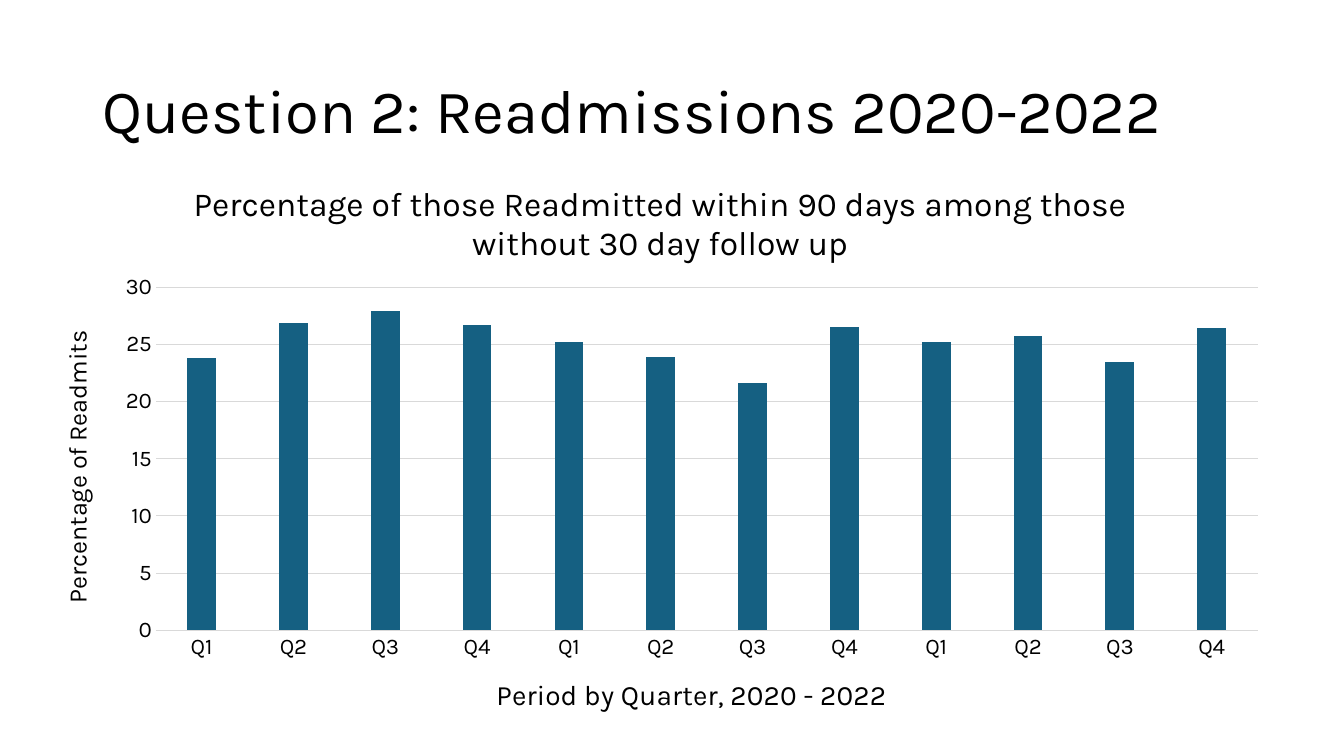
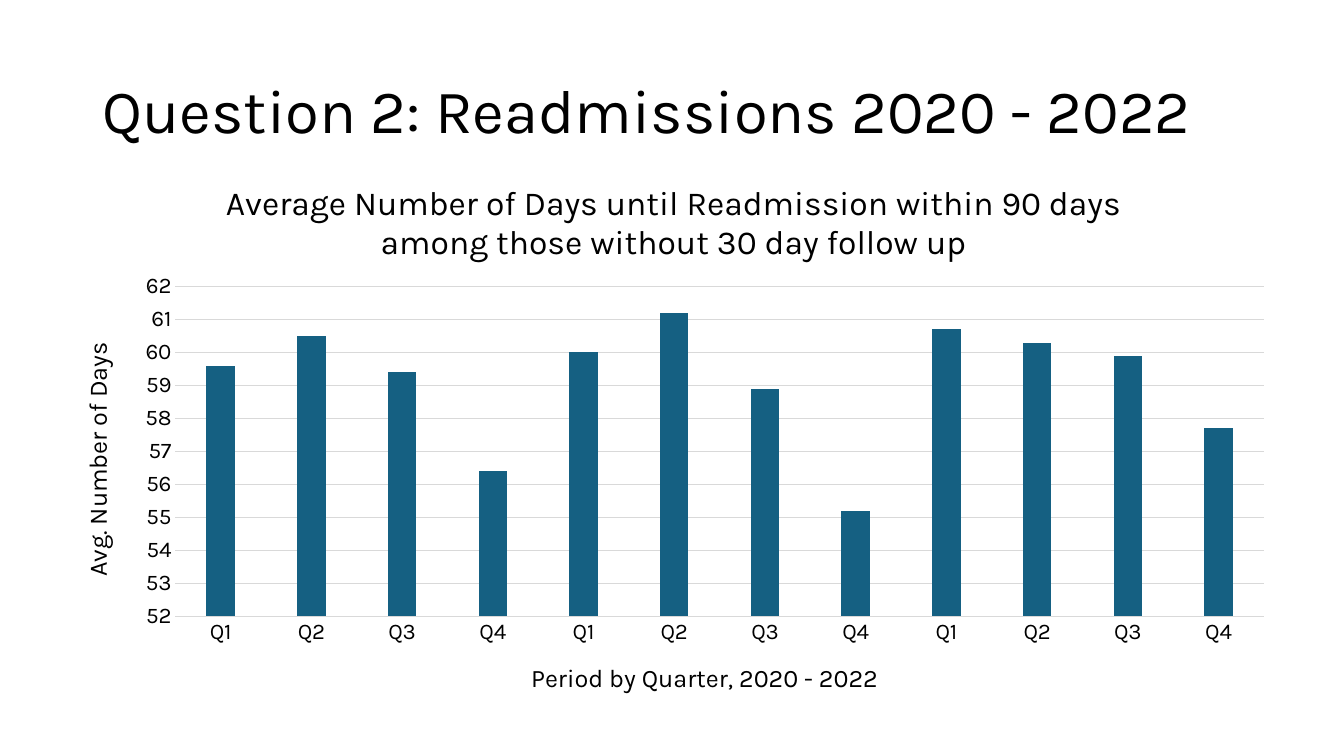
from lxml import etree
from pptx import Presentation, util as u
from pptx.chart.data import CategoryChartData
from pptx.dml.color import RGBColor
from pptx.enum import chart as ch, text
from pptx.oxml.ns import qn

COLORS = {"text": "000000", "bar": "156082", "grid": "D9D9D9"}
FONT = "Karla"
QUARTERS = ["Q1", "Q2", "Q3", "Q4"] * 3
PERIOD = "Period by Quarter, 2020 - 2022"


class Deck:
    """Holds the style and the current slide, laid out on a 100 by 100 grid."""

    def __init__(self):
        self.prs = Presentation()
        self.prs.slide_width, self.prs.slide_height = u.Inches(13.33), u.Inches(7.5)
        self.slide = None

    def new_slide(self):
        self.slide = self.prs.slides.add_slide(self.prs.slide_layouts[6])

    def box(self, col, row, cols, rows):
        w, h = self.prs.slide_width / 100, self.prs.slide_height / 100
        return int(col * w), int(row * h), int(cols * w), int(rows * h)

    def font(self, font, size):
        font.name, font.size, font.bold = FONT, u.Pt(size), False
        font.color.rgb = RGBColor.from_string(COLORS["text"])

    def hairline(self, line):
        line.color.rgb = RGBColor.from_string(COLORS["grid"])
        line.width = u.Pt(0.75)

    def title(self, words):
        tf = self.slide.shapes.add_textbox(*self.box(6.9, 5.33, 90, 19.33)).text_frame
        tf.word_wrap = True
        tf.vertical_anchor = text.MSO_ANCHOR.MIDDLE
        p = tf.paragraphs[0]
        p.text, p.line_spacing = words, 0.9
        self.font(p.font, 44)

    def caption(self, owner, words, size):
        p = owner.text_frame.paragraphs[0]
        p.text = words
        self.font(p.font, size)

    def plot_layout(self, chart, **shares):
        area = chart.element.find(".//" + qn("c:plotArea"))
        for old in area.findall(qn("c:layout")):
            area.remove(old)
        layout = etree.Element(qn("c:layout"))
        area.insert(0, layout)
        manual = etree.SubElement(layout, qn("c:manualLayout"))
        settings = {"layoutTarget": "inner", "xMode": "edge", "yMode": "edge", **shares}
        for name, value in settings.items():
            etree.SubElement(manual, qn("c:" + name)).set("val", str(value))

    def columns(self, box, heading, value_title, values, scale, period_size, top, height):
        data = CategoryChartData(number_format="General")
        data.categories = QUARTERS
        data.add_series("Series 1", values)
        chart = self.slide.shapes.add_chart(
            ch.XL_CHART_TYPE.COLUMN_CLUSTERED, *self.box(*box), data).chart
        self.font(chart.font, 10)
        chart.has_legend = False
        self.caption(chart.chart_title, heading, 24)
        chart.chart_title.include_in_layout = False
        plot = chart.plots[0]
        plot.gap_width, plot.overlap, plot.vary_by_categories = 219, -27, False
        fill = plot.series[0].format.fill
        fill.solid()
        fill.fore_color.rgb = RGBColor.from_string(COLORS["bar"])
        cat, val = chart.category_axis, chart.value_axis
        for axis, words, size in ((cat, PERIOD, period_size), (val, value_title, 18)):
            axis.major_tick_mark = axis.minor_tick_mark = ch.XL_TICK_MARK.NONE
            self.font(axis.tick_labels.font, 16)
            self.caption(axis.axis_title, words, size)
        self.hairline(cat.format.line)
        val.format.line.fill.background()
        val.has_major_gridlines = True
        self.hairline(val.major_gridlines.format.line)
        val.minimum_scale, val.maximum_scale, val.major_unit = scale
        self.plot_layout(chart, x=0.095, y=top, w=0.885, h=height)


def main():
    deck = Deck()
    deck.new_slide()
    deck.title("Question 2: Readmissions 2020-2022")
    deck.columns(
        (2.78, 21.07, 92.65, 76.93),
        "Percentage of those Readmitted within 90 days among those without 30 day follow up",
        "Percentage of Readmits",
        [23.8, 26.9, 27.9, 26.7, 25.2, 23.9, 21.6, 26.5, 25.2, 25.7, 23.5, 26.4],
        (0, 30, 5), period_size=20, top=0.22, height=0.59)

    deck.new_slide()
    deck.title("Question 2: Readmissions 2020 - 2022")
    deck.columns(
        (4.35, 20.93, 91.52, 73.87),
        "Average Number of Days until Readmission within 90 days among those without 30 day follow up",
        "Avg. Number of Days",
        [59.6, 60.5, 59.4, 56.4, 60, 61.2, 58.9, 55.2, 60.7, 60.3, 59.9, 57.7],
        (52, 62, 1), period_size=18, top=0.23, height=0.59)
    deck.prs.save("out.pptx")


if __name__ == "__main__":
    main()
